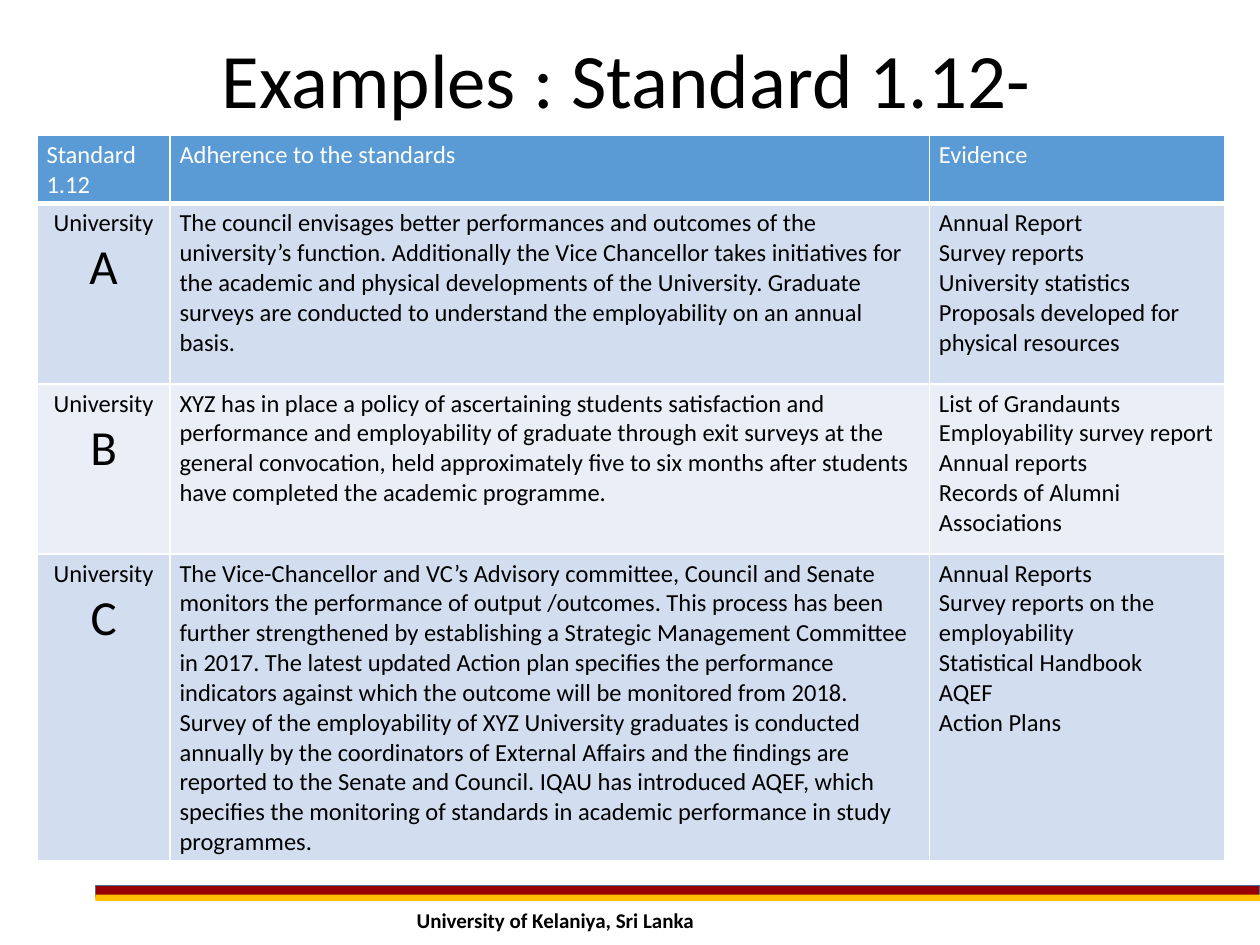
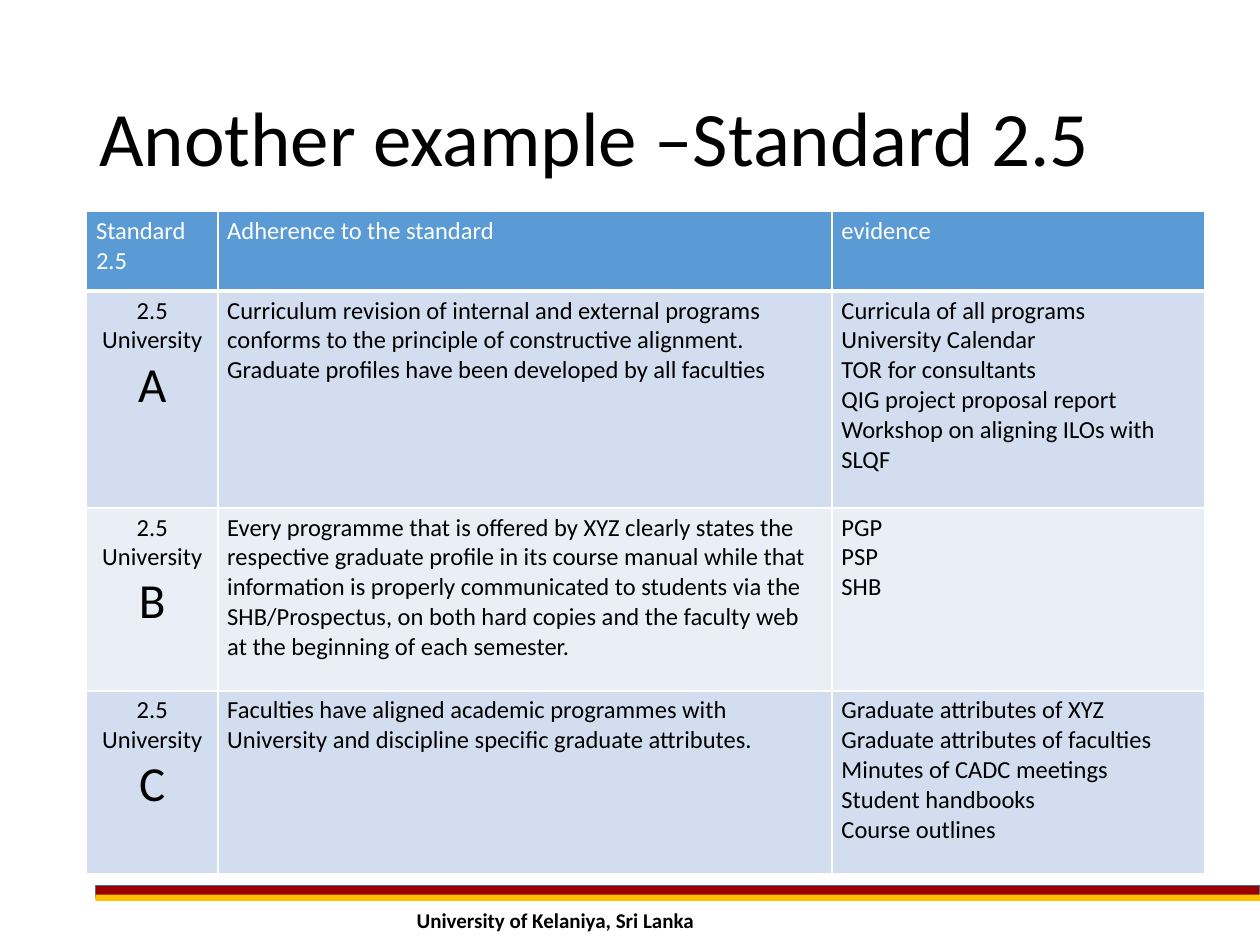
from dataclasses import dataclass

from lxml import etree
from pptx import Presentation
from pptx.dml.color import RGBColor
from pptx.enum.shapes import MSO_SHAPE
from pptx.enum.text import MSO_ANCHOR, MSO_AUTO_SIZE, PP_ALIGN
from pptx.oxml.ns import qn
from pptx.util import Pt

RECTANGLE = MSO_SHAPE.RECTANGLE
MIDDLE = MSO_ANCHOR.MIDDLE
LEFT, CENTER = PP_ALIGN.LEFT, PP_ALIGN.CENTER
NO_AUTOFIT, GROW = MSO_AUTO_SIZE.NONE, MSO_AUTO_SIZE.SHAPE_TO_FIT_TEXT


@dataclass(frozen=True)
class Theme:
    font: str = "Calibri"
    text: str = "000000"
    white: str = "FFFFFF"
    header: str = "5B9BD5"
    odd_row: str = "D2DEEF"
    even_row: str = "EAEFF7"
    red_band: str = "990000"
    red_band_line: str = "43739E"
    gold_band: str = "FFC000"
    title_size: int = 44
    letter_size: int = 28
    table_size: int = 14
    footer_size: int = 12


THEME = Theme()
SLIDE_WIDTH, SLIDE_HEIGHT = 720, 540
FOOTER = "University of Kelaniya, Sri Lanka"


def add_run(paragraph, text, size, color=THEME.text, bold=False):
    run = paragraph.add_run()
    run.text = text
    run.font.name = THEME.font
    run.font.size = Pt(size)
    run.font.bold = bold
    run.font.color.rgb = RGBColor.from_string(color)


def add_band(slide, top, height, color, line_color=None):
    """Coloured strip that runs to the right edge of the slide."""
    left = 54.5
    band = slide.shapes.add_shape(
        RECTANGLE, Pt(left), Pt(top), Pt(SLIDE_WIDTH - left), Pt(height))
    band.shadow.inherit = False
    band.fill.solid()
    band.fill.fore_color.rgb = RGBColor.from_string(color)
    if line_color:
        band.line.color.rgb = RGBColor.from_string(line_color)
        band.line.width = Pt(1)
    else:
        band.line.fill.background()


def add_footer(slide):
    add_band(slide, 506, 6.5, THEME.red_band, THEME.red_band_line)
    add_band(slide, 511.2, 3.6, THEME.gold_band)
    box = slide.shapes.add_textbox(Pt(231), Pt(515), Pt(312.5), Pt(21.8))
    box.text_frame.word_wrap = True
    box.text_frame.auto_size = GROW
    add_run(box.text_frame.paragraphs[0], FOOTER, THEME.footer_size, bold=True)


def set_title(slide, text, left, top, width, height):
    title = slide.shapes.title
    title.left, title.top = Pt(left), Pt(top)
    title.width, title.height = Pt(width), Pt(height)
    frame = title.text_frame
    frame.auto_size = NO_AUTOFIT
    frame.vertical_anchor = MIDDLE
    paragraph = frame.paragraphs[0]
    paragraph.alignment = LEFT
    paragraph.line_spacing = 0.9
    add_run(paragraph, text, THEME.title_size)


def set_borders(cell, bottom_width):
    """White rules; border elements must come before the cell fill."""
    properties = cell._tc.get_or_add_tcPr()
    widths = {"a:lnL": 1, "a:lnR": 1, "a:lnT": 1, "a:lnB": bottom_width}
    for position, (tag, width) in enumerate(widths.items()):
        line = etree.Element(qn(tag), w=str(Pt(width)))
        fill = etree.SubElement(line, qn("a:solidFill"))
        etree.SubElement(fill, qn("a:srgbClr"), val=THEME.white)
        properties.insert(position, line)


def fill_cell(cell, paragraphs, fill, color=THEME.text, alignment=LEFT,
              bottom_width=1):
    """Each paragraph is a list of (text, size) runs."""
    cell.margin_left = cell.margin_right = Pt(5.4)
    cell.margin_top = cell.margin_bottom = Pt(2.7)
    cell.fill.solid()
    cell.fill.fore_color.rgb = RGBColor.from_string(fill)
    set_borders(cell, bottom_width)
    frame = cell.text_frame
    for index, runs in enumerate(paragraphs):
        paragraph = frame.add_paragraph() if index else frame.paragraphs[0]
        paragraph.alignment = alignment
        for text, size in runs:
            add_run(paragraph, text, size, color)


def plain(lines):
    return [[(line, THEME.table_size)] for line in lines]


def university(letter, prefix):
    label = [("University ", THEME.table_size), (letter, THEME.letter_size)]
    return plain(prefix) + [label]


def add_standard_table(slide, left, top, widths, heights, headings, rows, prefix=()):
    """Header row, then one row per university: adherence and evidence."""
    frame = slide.shapes.add_table(
        len(heights), len(widths), Pt(left), Pt(top), Pt(sum(widths)), Pt(sum(heights)))
    table = frame.table
    for column, width in zip(table.columns, widths):
        column.width = Pt(width)
    for row, height in zip(table.rows, heights):
        row.height = Pt(height)

    for index, lines in enumerate(headings):
        fill_cell(table.cell(0, index), plain(lines), THEME.header, THEME.white,
                  bottom_width=3)
    for index, (letter, (adherence, evidence)) in enumerate(zip("ABC", rows), 1):
        fill = THEME.odd_row if index % 2 else THEME.even_row
        fill_cell(table.cell(index, 0), university(letter, prefix), fill,
                  alignment=CENTER)
        fill_cell(table.cell(index, 1), plain(adherence), fill)
        fill_cell(table.cell(index, 2), plain(evidence), fill)


def add_slide(presentation):
    slide = presentation.slides.add_slide(presentation.slide_layouts[5])
    add_footer(slide)
    return slide


# Table content: (adherence paragraphs, evidence paragraphs)
STANDARD_1_12 = [
    (["The council envisages better performances and outcomes of the university’s "
      "function. Additionally the Vice Chancellor takes initiatives for the academic "
      "and physical developments of the University. Graduate surveys are conducted to "
      "understand the employability on an annual basis."],
     ["Annual Report", "Survey reports", "University statistics",
      "Proposals developed for physical resources"]),
    (["XYZ has in place a policy of ascertaining students satisfaction and performance "
      "and employability of graduate through exit surveys at the general convocation, "
      "held approximately five to six months after students have completed the "
      "academic programme."],
     ["List of Grandaunts", "Employability survey report", "Annual reports",
      "Records of Alumni Associations"]),
    (["The Vice-Chancellor and VC’s Advisory committee, Council and Senate monitors the "
      "performance of output /outcomes. This process has been further strengthened by "
      "establishing a Strategic Management Committee in 2017. The latest updated Action "
      "plan specifies the performance indicators against which the outcome will be "
      "monitored from 2018. Survey of the employability of XYZ University graduates is "
      "conducted annually by the coordinators of External Affairs and the findings are "
      "reported to the Senate and Council. IQAU has introduced AQEF, which specifies "
      "the monitoring of standards in academic performance in study programmes."],
     ["Annual Reports", "Survey reports on the employability", "Statistical Handbook",
      "AQEF", "Action Plans"]),
]

STANDARD_2_5 = [
    (["Curriculum revision of internal and external programs conforms to the principle "
      "of constructive alignment.",
      "Graduate profiles have been developed by all faculties"],
     ["Curricula of all programs", "University Calendar", "TOR for consultants",
      "QIG project proposal report", "Workshop on aligning ILOs with SLQF"]),
    (["Every programme that is offered by XYZ clearly states the respective graduate "
      "profile in its course manual while that information is properly communicated to "
      "students via the SHB/Prospectus, on both hard copies and the faculty web at the "
      "beginning of each semester."],
     ["PGP", "PSP", "SHB"]),
    (["Faculties have aligned academic programmes with University and discipline "
      "specific graduate attributes."],
     ["Graduate attributes of XYZ", "Graduate attributes of faculties",
      "Minutes of CADC meetings", "Student handbooks", "Course outlines"]),
]


def main():
    presentation = Presentation()
    presentation.slide_width, presentation.slide_height = Pt(SLIDE_WIDTH), Pt(SLIDE_HEIGHT)

    # Standard 1.12
    slide = add_slide(presentation)
    set_title(slide, "Examples : Standard 1.12-", 119.5, 18, 495.4, 59)
    add_standard_table(
        slide, 21.2, 77.4, [76, 434, 168.5], [39, 103, 97.2, 175.4],
        [["Standard", "1.12"], ["Adherence to the standards"], ["Evidence"]],
        STANDARD_1_12)

    # Standard 2.5
    slide = add_slide(presentation)
    set_title(slide, "Another example –Standard 2.5", 49.5, 28.8, 621, 104.4)
    add_standard_table(
        slide, 49.5, 120.8, [75, 351, 213], [45.5, 124, 104.5, 104.5],
        [["Standard 2.5"], ["Adherence to the standard"], ["evidence"]],
        STANDARD_2_5, prefix=["2.5"])

    presentation.save("out.pptx")


if __name__ == "__main__":
    main()
